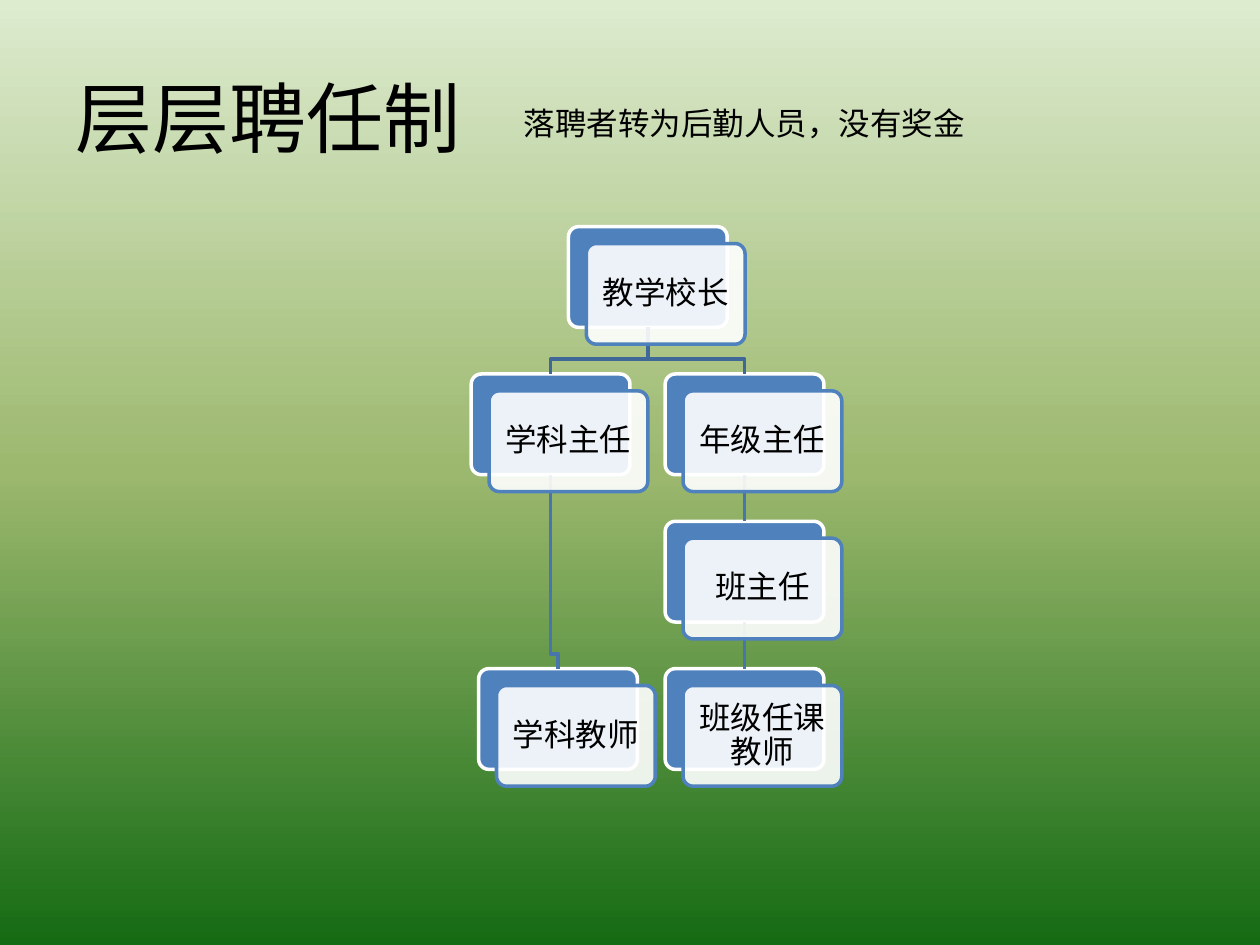
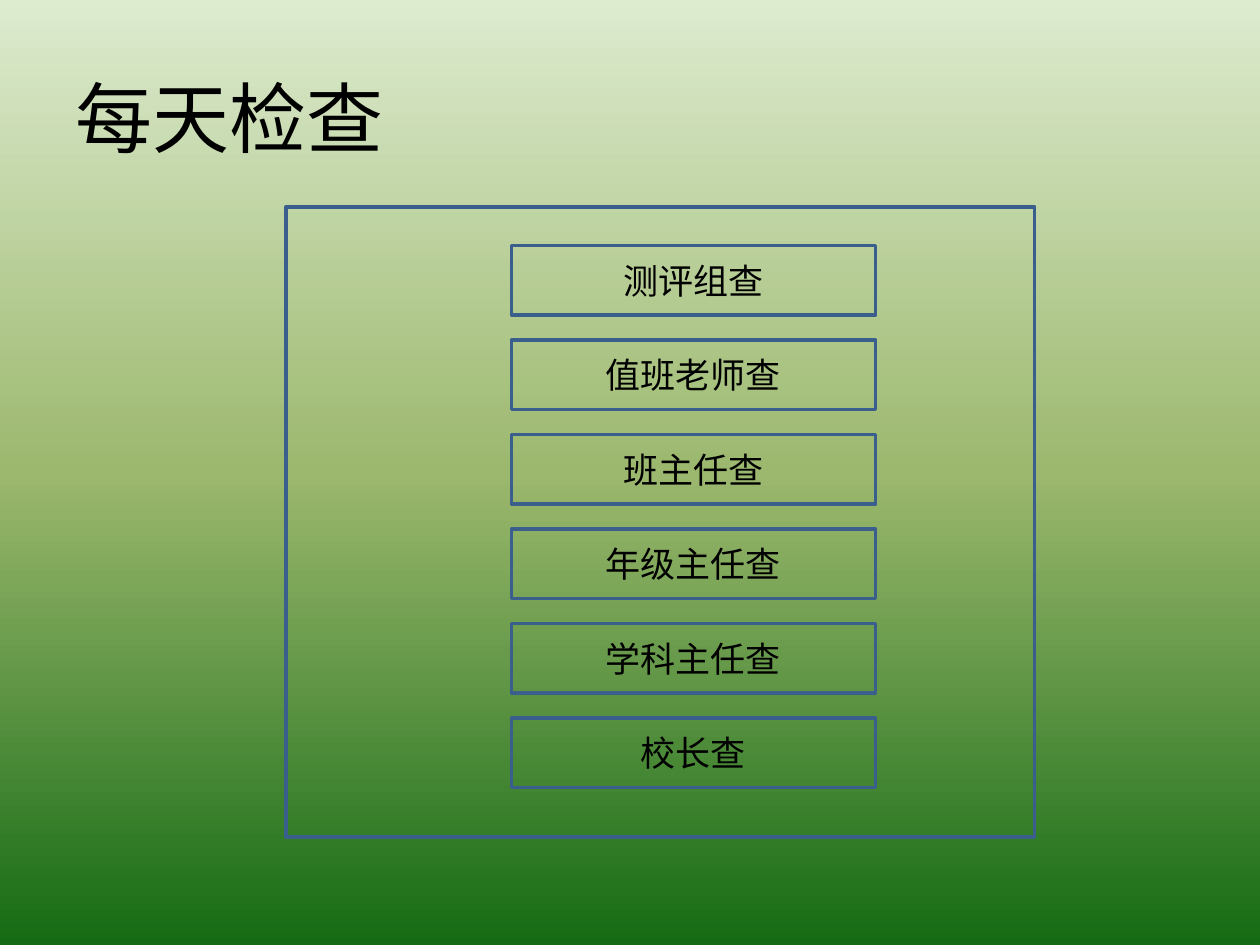
"""Build two slides on a school's appointment chain and its daily checks."""

import dataclasses
from typing import Optional

import lxml.etree
import pptx
import pptx.dml.color
import pptx.enum.shapes
import pptx.enum.text
import pptx.oxml.ns
import pptx.util

Cm = pptx.util.Cm
Pt = pptx.util.Pt
ShapeKind = pptx.enum.shapes.MSO_SHAPE
Align = pptx.enum.text.PP_ALIGN
Anchor = pptx.enum.text.MSO_ANCHOR

BLACK, WHITE, BLUE = "000000", "FFFFFF", "4F81BD"
UPPER_LINK, LOWER_LINK, BOX_EDGE = "3F6797", "4875AC", "3A5F8C"
BACKGROUND_STOPS = ((0, "DDEBCF"), (50, "9CB86E"), (100, "156B13"))
TITLE_FONT, BODY_FONT = "Noto Sans CJK SC", "Calibri"
LINE_WIDTH = Pt(2)

CARD_WIDTH, CARD_HEIGHT = Cm(3.2), Cm(2.03)
CARD_SHIFT_X, CARD_SHIFT_Y = Cm(0.36), Cm(0.34)
FIRST_ROW_TOP, ROW_STEP = Cm(4.57), Cm(2.97)
BEND_ABOVE_CHILD = Cm(0.3)

CHECKERS = ("测评组查", "值班老师查", "班主任查", "年级主任查", "学科主任查", "校长查")
CHECK_TOP, CHECK_STEP = Cm(4.95), Cm(1.905)


@dataclasses.dataclass(frozen=True)
class Post:
    """A post in the appointment chain; left is in centimetres."""

    name: str
    left: float
    row: int
    appointed_by: Optional[str] = None


POSTS = (
    Post("教学校长", 11.46, 0),
    Post("学科主任", 9.5, 1, "教学校长"),
    Post("年级主任", 13.41, 1, "教学校长"),
    Post("班主任", 13.41, 2, "年级主任"),
    Post("学科教师", 9.65, 3, "学科主任"),
    Post("班级任课教师", 13.41, 3, "班主任"),
)


def colour(value: str) -> pptx.dml.color.RGBColor:
    """Return the colour for a hex string."""
    return pptx.dml.color.RGBColor.from_string(value)


def add_child(parent, tag: str, **attributes: str):
    """Append an XML element with a prefixed tag."""
    return lxml.etree.SubElement(parent, pptx.oxml.ns.qn(tag), **attributes)


def set_background(master) -> None:
    """Give the master a vertical gradient."""
    fill = master.background.fill
    fill.gradient()
    fill.gradient_angle = 270
    stop_list = master.element.xpath("./p:cSld/p:bg//a:gsLst")[0]
    for stop in list(stop_list):
        stop_list.remove(stop)
    for percent, value in BACKGROUND_STOPS:
        stop = add_child(stop_list, "a:gs", pos=str(percent * 1000))
        add_child(stop, "a:srgbClr", val=value)


def write_text(shape, text: str, *, size: int, font: str = BODY_FONT,
               align=Align.LEFT, anchor=Anchor.MIDDLE,
               line_spacing: Optional[float] = None,
               inset: Optional[int] = None) -> None:
    """Write one formatted paragraph into a shape."""
    frame = shape.text_frame
    frame.word_wrap = True
    frame.vertical_anchor = anchor
    if inset is not None:
        frame.margin_left = frame.margin_right = inset
        frame.margin_top = frame.margin_bottom = inset
    paragraph = frame.paragraphs[0]
    paragraph.alignment = align
    paragraph.line_spacing = line_spacing
    run = paragraph.add_run()
    run.text = text
    run.font.size = Pt(size)
    run.font.name = font
    run.font.color.rgb = colour(BLACK)


def style_line(line, value: str) -> None:
    """Set the shared line width and a colour."""
    line.width = LINE_WIDTH
    line.color.rgb = colour(value)


def add_box(slide, kind, left: int, top: int, width: int, height: int, *,
            edge: str, fill: Optional[str] = None, opacity: int = 100):
    """Add an outlined preset shape."""
    shape = slide.shapes.add_shape(kind, left, top, width, height)
    shape.shadow.inherit = False
    style_line(shape.line, edge)
    if fill is None:
        shape.fill.background()
        return shape
    shape.fill.solid()
    shape.fill.fore_color.rgb = colour(fill)
    if opacity < 100:
        fill_colour = shape.element.spPr.xpath("./a:solidFill/a:srgbClr")[0]
        add_child(fill_colour, "a:alpha", val=str(opacity * 1000))
    return shape


def add_card(slide, left: int, top: int, **style):
    """Add one rounded card."""
    card = add_box(slide, ShapeKind.ROUNDED_RECTANGLE, left, top,
                   CARD_WIDTH, CARD_HEIGHT, **style)
    card.adjustments[0] = 0.1
    return card


def link_cards(slide, parent, child, value: str) -> None:
    """Join two cards with a straight or a bent line."""
    start_x = parent.left + CARD_WIDTH // 2
    start_y = parent.top + CARD_HEIGHT
    end_x = child.left + CARD_WIDTH // 2
    if start_x == end_x:
        link = slide.shapes.add_connector(
            pptx.enum.shapes.MSO_CONNECTOR.STRAIGHT,
            start_x, start_y, end_x, child.top)
        link.begin_connect(parent, 2)
        link.end_connect(child, 0)
        add_child(link.element.spPr, "a:effectLst")
    else:
        bend_y = child.top - BEND_ABOVE_CHILD
        builder = slide.shapes.build_freeform(start_x, start_y)
        builder.add_line_segments(
            [(start_x, bend_y), (end_x, bend_y), (end_x, child.top)],
            close=False)
        link = builder.convert_to_shape()
        link.fill.background()
        link.shadow.inherit = False
    style_line(link.line, value)


def add_titled_slide(presentation, title: str):
    """Add a blank slide with its title."""
    slide = presentation.slides.add_slide(presentation.slide_layouts[6])
    box = slide.shapes.add_textbox(Cm(1.27), Cm(0.76), Cm(22.86), Cm(3.18))
    write_text(box, title, size=44, font=TITLE_FONT)
    return slide


def build_appointment_slide(presentation) -> None:
    """Draw the chain of appointments."""
    slide = add_titled_slide(presentation, "层层聘任制")
    cards = {
        post.name: add_card(slide, Cm(post.left),
                            FIRST_ROW_TOP + post.row * ROW_STEP,
                            edge=WHITE, fill=BLUE)
        for post in POSTS
    }
    for post in POSTS:
        if post.appointed_by:
            link_cards(slide, cards[post.appointed_by], cards[post.name],
                       UPPER_LINK if post.row == 1 else LOWER_LINK)
    for name, card in cards.items():
        label = add_card(slide, card.left + CARD_SHIFT_X,
                         card.top + CARD_SHIFT_Y,
                         edge=BLUE, fill=WHITE, opacity=90)
        write_text(label, name, size=18, align=Align.CENTER,
                   line_spacing=0.9, inset=Cm(0.12))
    note = slide.shapes.add_textbox(Cm(10.31), Cm(1.98), Cm(9.93), Cm(1.02))
    write_text(note, "落聘者转为后勤人员，没有奖金", size=18, anchor=Anchor.TOP)


def build_check_slide(presentation) -> None:
    """Draw the list of daily checks."""
    slide = add_titled_slide(presentation, "每天检查")
    add_box(slide, ShapeKind.RECTANGLE, Cm(5.77), Cm(4.17), Cm(15.09),
            Cm(12.7), edge=BOX_EDGE)
    for index, checker in enumerate(CHECKERS):
        box = add_box(slide, ShapeKind.RECTANGLE, Cm(10.31),
                      CHECK_TOP + index * CHECK_STEP, Cm(7.34), Cm(1.4),
                      edge=BOX_EDGE)
        write_text(box, checker, size=20, align=Align.CENTER)


def main() -> None:
    """Build and save the presentation."""
    presentation = pptx.Presentation()
    presentation.slide_width = Cm(25.4)
    presentation.slide_height = Cm(19.05)
    set_background(presentation.slide_master)
    build_appointment_slide(presentation)
    build_check_slide(presentation)
    presentation.save("out.pptx")


if __name__ == "__main__":
    main()
